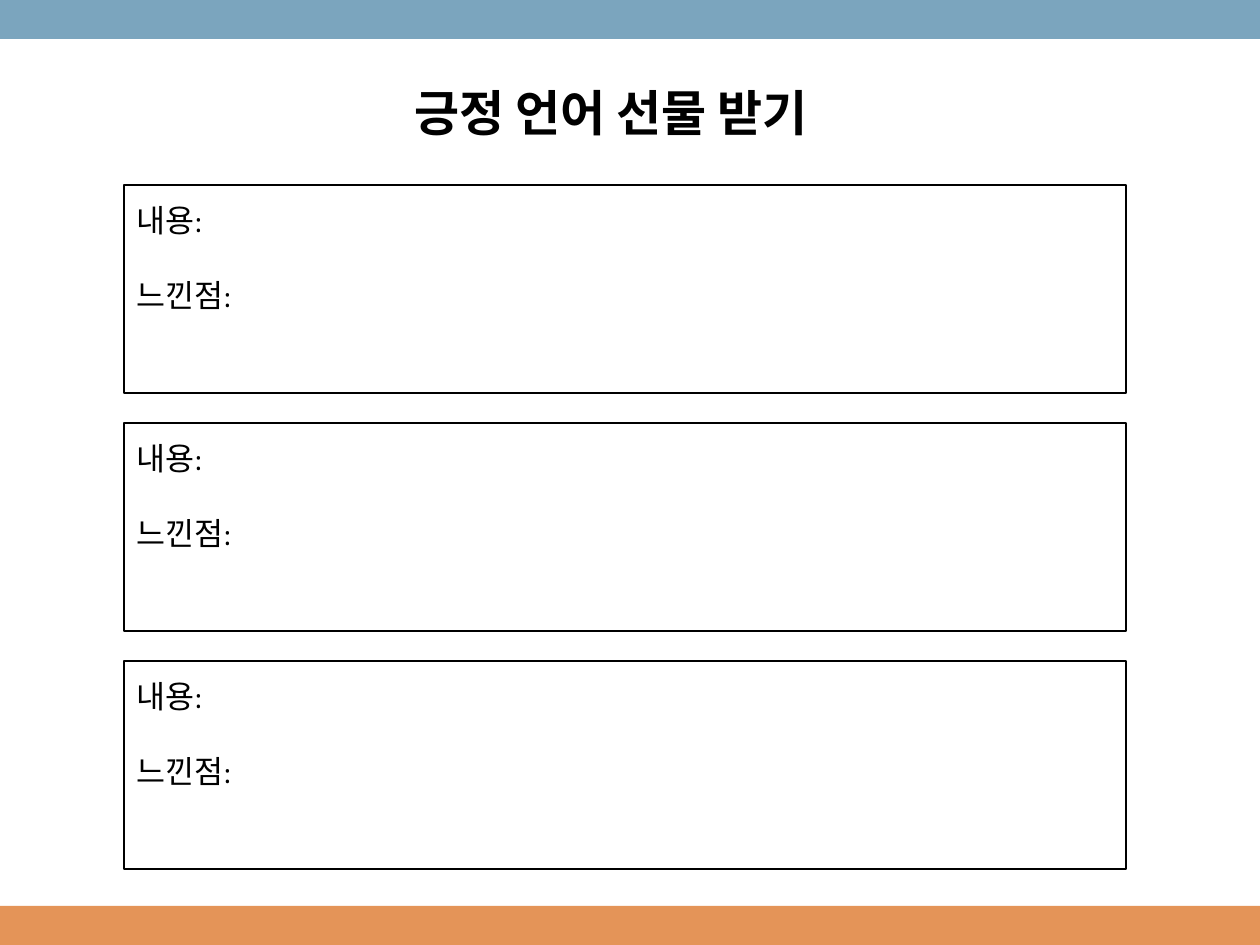
import dataclasses

import pptx
import pptx.dml.color
import pptx.enum.shapes
import pptx.enum.text
import pptx.util

EMU_PER_PX = 914400 // 126
SLIDE_W, SLIDE_H = 1260, 945
BAR_H = 39
CARD_X, CARD_Y, CARD_W, CARD_H = 124, 185, 1002, 208
CARD_STEP = 238
CARD_COUNT = 3


@dataclasses.dataclass(frozen=True)
class Theme:
    font: str = "Cambria"
    ink: str = "000000"
    top_bar: str = "7BA5BE"
    bottom_bar: str = "E49458"
    title_size: int = 28
    body_size: int = 18
    prompt_gap: int = 21
    border: float = 1.25


THEME = Theme()


def px(n):
    return pptx.util.Emu(n * EMU_PER_PX)


def rgb(value):
    return pptx.dml.color.RGBColor.from_string(value)


def add_rect(slide, x, y, w, h, fill=None, line=None):
    sp = slide.shapes.add_shape(
        pptx.enum.shapes.MSO_SHAPE.RECTANGLE, px(x), px(y), px(w), px(h))
    sp.shadow.inherit = False
    if fill:
        sp.fill.solid()
        sp.fill.fore_color.rgb = rgb(fill)
    else:
        sp.fill.background()
    if line:
        sp.line.color.rgb = rgb(line)
        sp.line.width = pptx.util.Pt(THEME.border)
    else:
        sp.line.fill.background()


def add_text(slide, x, y, w, h, lines, size, bold=False, gap=0):
    """Add one paragraph per line, with gap points between them."""
    tf = slide.shapes.add_textbox(px(x), px(y), px(w), px(h)).text_frame
    tf.word_wrap = False
    tf.auto_size = pptx.enum.text.MSO_AUTO_SIZE.SHAPE_TO_FIT_TEXT
    tf.text = "\n".join(lines)
    for i, p in enumerate(tf.paragraphs):
        p.font.name = THEME.font
        p.font.size = pptx.util.Pt(size)
        p.font.bold = bold
        p.font.color.rgb = rgb(THEME.ink)
        p.space_before = pptx.util.Pt(gap if i else 0)


def add_card(slide, y):
    add_rect(slide, CARD_X, y, CARD_W, CARD_H, line=THEME.ink)
    add_text(slide, CARD_X, y + 10, 130, 127, ["내용:", "느낀점:"],
             THEME.body_size, gap=THEME.prompt_gap)


def main():
    prs = pptx.Presentation()
    prs.slide_width, prs.slide_height = px(SLIDE_W), px(SLIDE_H)
    slide = prs.slides.add_slide(prs.slide_layouts[6])
    add_rect(slide, 0, SLIDE_H - BAR_H, SLIDE_W, BAR_H, fill=THEME.bottom_bar)
    add_rect(slide, 0, 0, SLIDE_W, BAR_H, fill=THEME.top_bar)
    add_text(slide, 402, 76, 454, 72, ["긍정 언어 선물 받기"],
             THEME.title_size, bold=True)
    for i in range(CARD_COUNT):
        add_card(slide, CARD_Y + i * CARD_STEP)
    prs.save("out.pptx")


if __name__ == "__main__":
    main()
